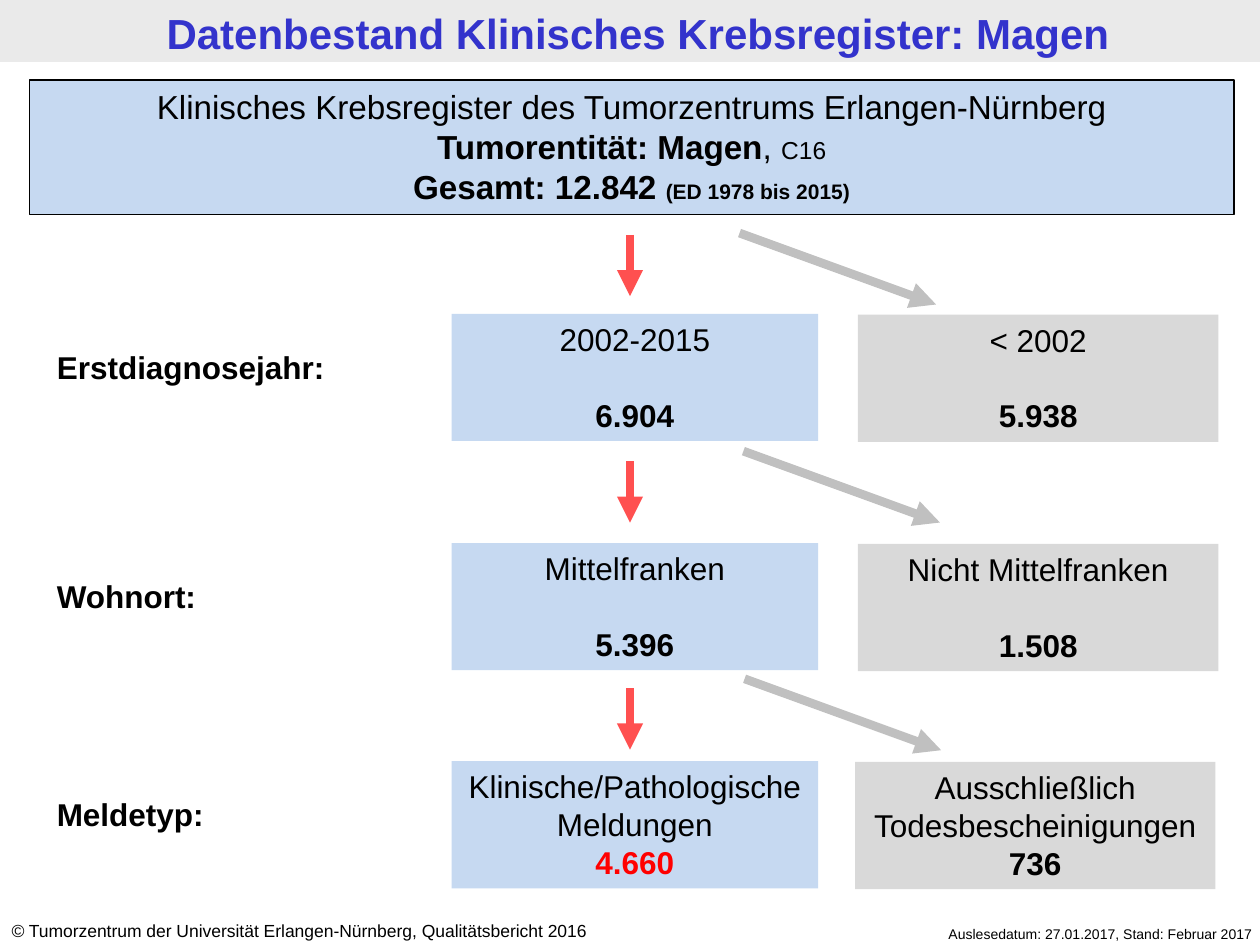
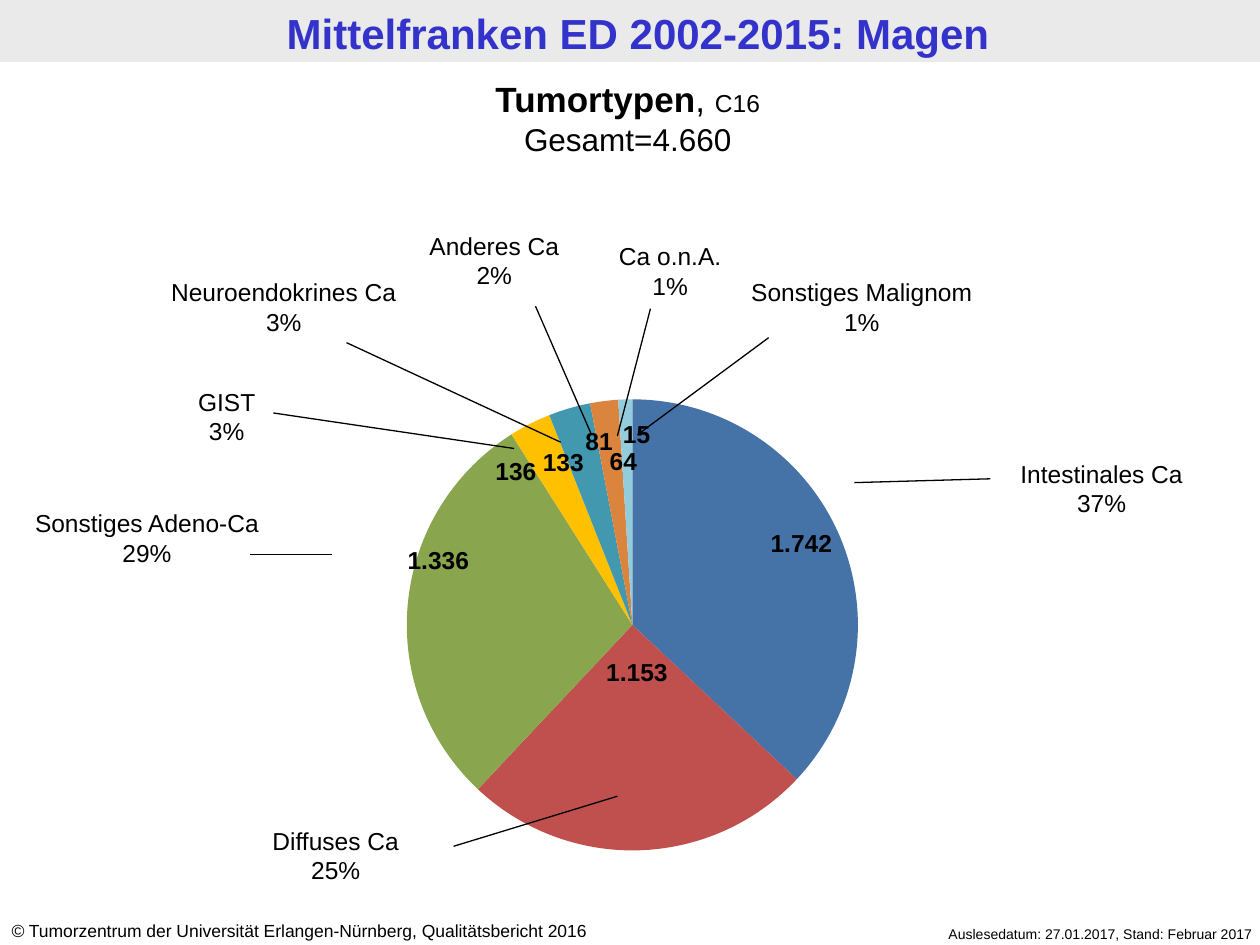
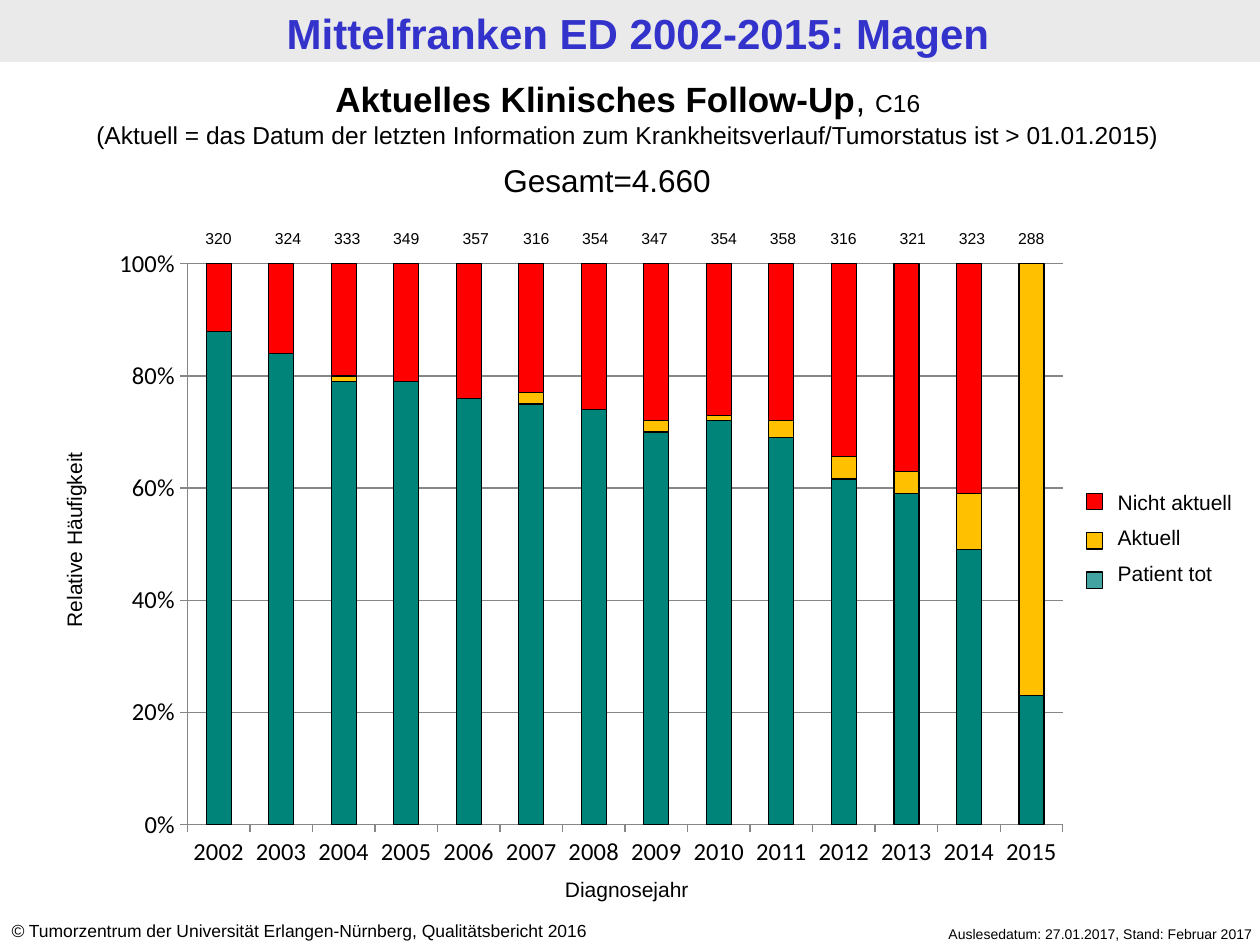
from lxml import etree
from pptx import Presentation
from pptx.chart.data import CategoryChartData
from pptx.dml.color import RGBColor
from pptx.enum import chart as ch, shapes, text
from pptx.oxml import parse_xml
from pptx.oxml.ns import nsdecls, qn
from pptx.util import Pt

BLACK = RGBColor(0x00, 0x00, 0x00)
WHITE = RGBColor(0xFF, 0xFF, 0xFF)
BAND = RGBColor(0xEA, 0xEA, 0xEA)
TITLE = RGBColor(0x33, 0x33, 0xCC)
KEPT = RGBColor(0xC6, 0xD9, 0xF1)
EXCLUDED = RGBColor(0xD9, 0xD9, 0xD9)
ARROW_KEPT = RGBColor(0xFF, 0x50, 0x50)
ARROW_EXCLUDED = RGBColor(0xC0, 0xC0, 0xC0)
GRID = RGBColor(0x86, 0x86, 0x86)
RED = RGBColor(0xFF, 0x00, 0x00)
AMBER = RGBColor(0xFF, 0xC0, 0x00)
TEAL = RGBColor(0x00, 0x83, 0x78)
TEAL_KEY = RGBColor(0x00, 0x83, 0x80)
SLICES = [RGBColor.from_string(c) for c in (
    "4572A7", "C0504D", "89A54E", "FFC000", "4198AF", "DB843D", "93CDDD",
    "FCD5B5", "BFBFBF")]

LEFT, CENTER, RIGHT = (text.PP_ALIGN.LEFT, text.PP_ALIGN.CENTER,
                       text.PP_ALIGN.RIGHT)


def run(words, size, bold=False, color=BLACK, italic=False):
    return words, size, bold, color, italic


class Deck:
    """Holds the presentation, its style and the slide being filled."""
    font = "Arial"
    chart_font = "Calibri"

    def __init__(self):
        self.prs = Presentation()
        self.prs.slide_width, self.prs.slide_height = Pt(720), Pt(540)
        self.s = None

    def slide(self, title):
        """Start a slide with title band and footers."""
        self.s = self.prs.slides.add_slide(self.prs.slide_layouts[6])
        self.s.background.fill.solid()
        self.s.background.fill.fore_color.rgb = WHITE
        self.rect(0, 0, 720, 35.4, BAND)
        self.text(4.6, 1.1, 720, 35.3, [[run(title, 24, True, TITLE)]],
                  inset=(6.5, 2.9))
        self.text(-0.5, 522.4, 377.3, 19.4, [[
            run("©", 10, italic=True),
            run(" Tumorzentrum der Universität Erlangen-Nürnberg, "
                "Qualitätsbericht 2016", 10)]], LEFT)
        self.text(478.8, 525.2, 244.1, 17.3, [[
            run("Auslesedatum: 27.01.2017, Stand: Februar 2017", 8)]], RIGHT)

    def fill_text(self, sp, paragraphs, align=CENTER, gap=0, wrap=True,
                  inset=(7.2, 3.6)):
        """Write paragraphs (lists of runs), gap points apart."""
        tf = sp.text_frame
        tf.word_wrap = wrap
        tf.vertical_anchor = text.MSO_ANCHOR.TOP
        tf.margin_left = tf.margin_right = Pt(inset[0])
        tf.margin_top = tf.margin_bottom = Pt(inset[1])
        for i, runs in enumerate(paragraphs):
            p = tf.add_paragraph() if i else tf.paragraphs[0]
            p.alignment = align
            if i and gap:
                p.space_before = Pt(gap)
            for words, size, bold, color, italic in runs:
                r = p.add_run()
                r.text = words
                f = r.font
                f.name, f.size, f.bold, f.italic = (self.font, Pt(size), bold,
                                                    italic)
                f.color.rgb = color

    def text(self, x, y, w, h, paragraphs, align=CENTER, rotation=0, **style):
        sp = self.s.shapes.add_textbox(Pt(x), Pt(y), Pt(w), Pt(h))
        sp.rotation = rotation
        self.fill_text(sp, paragraphs, align, **style)

    def rect(self, x, y, w, h, fill, outlined=False, paragraphs=(), alpha=None,
             **style):
        sp = self.s.shapes.add_shape(shapes.MSO_SHAPE.RECTANGLE,
                                     Pt(x), Pt(y), Pt(w), Pt(h))
        sp.shadow.inherit = False
        sp.fill.solid()
        sp.fill.fore_color.rgb = fill
        if alpha:
            clr = sp.element.spPr.find(qn("a:solidFill"))[0]
            etree.SubElement(clr, qn("a:alpha")).set("val", str(alpha * 1000))
        if outlined:
            sp.line.color.rgb = BLACK
            sp.line.width = Pt(0.75)
        else:
            sp.line.fill.background()
        if paragraphs:
            self.fill_text(sp, paragraphs, **style)

    def line(self, x1, y1, x2, y2, color=BLACK, width=0.75, arrow=False):
        cx = self.s.shapes.add_connector(shapes.MSO_CONNECTOR.STRAIGHT,
                                         Pt(x1), Pt(y1), Pt(x2), Pt(y2))
        cx.line.color.rgb = color
        cx.line.width = Pt(width)
        spPr = cx.element.spPr
        if arrow:
            ln = spPr.find(qn("a:ln"))
            etree.SubElement(ln, qn("a:tailEnd")).set("type", "triangle")
        etree.SubElement(spPr, qn("a:effectLst"))

    def chart(self, kind, box, categories, series, plot_box):
        """Add a chart whose plot fills plot_box; both boxes are on-slide."""
        data = CategoryChartData()
        data.categories = categories
        for i, values in enumerate(series, 1):
            data.add_series(f"Series {i}", values)
        chart = self.s.shapes.add_chart(kind, *map(Pt, box), data).chart
        chart.has_legend = chart.has_title = False
        chart.font.name = self.chart_font
        chart.font.size = Pt(18)
        chart.font.color.rgb = BLACK
        area = chart.element.find(".//" + qn("c:plotArea"))
        for old in area.findall(qn("c:layout")):
            area.remove(old)
        (x, y, w, h), (px, py, pw, ph) = box, plot_box
        shares = (px - x) / w, (py - y) / h, pw / w, ph / h
        sizes = "".join(f'<c:{tag} val="{share:.4f}"/>'
                        for tag, share in zip("xywh", shares))
        area.insert(0, parse_xml(
            f'<c:layout {nsdecls("c")}><c:manualLayout>'
            '<c:layoutTarget val="inner"/><c:xMode val="edge"/>'
            f'<c:yMode val="edge"/>{sizes}</c:manualLayout></c:layout>'))
        return chart


def data_flow(deck):
    deck.slide("Datenbestand Klinisches Krebsregister: Magen")
    deck.rect(16.8, 45.7, 688.3, 77, KEPT, True, [
        [run("Klinisches Krebsregister des Tumorzentrums Erlangen-Nürnberg",
             19)],
        [run("Tumorentität: Magen", 19, True), run(", ", 19), run("C16", 14)],
        [run("Gesamt: 12.842 ", 19, True),
         run("(ED 1978 bis 2015)", 12, True)]], inset=(7.9, 3.6))
    # criterion, kept, excluded, row top, gap, excluded left,
    # kept arrow top, excluded arrow start
    steps = [
        ("Erstdiagnosejahr:", ("2002-2015", "6.904"), ("< 2002", "5.938"),
         179.3, 21.6, 490.3, 134.3, (422.6, 133.2)),
        ("Wohnort:", ("Mittelfranken", "5.396"),
         ("Nicht Mittelfranken", "1.508"),
         310.3, 21.6, 490.3, 263.7, (424.8, 257.8)),
        ("Meldetyp:", ("Klinische/Pathologische Meldungen", "4.660"),
         ("Ausschließlich Todesbescheinigungen", "736"),
         434.9, 0, 488.6, 393.3, (425.5, 387.9)),
    ]
    for (criterion, kept, excluded, top, gap, excluded_x, arrow_y,
         (x, y)) in steps:
        result = RED if kept[1] == "4.660" else BLACK
        deck.text(25.4, top + 16.1, 198.7, 28.8, [[run(criterion, 18, True)]],
                  LEFT)
        for left, dy, w, fill, (name, count), color in (
                (258, 0, 209.5, KEPT, kept, result),
                (excluded_x, 0.5, 205.9, EXCLUDED, excluded, BLACK)):
            deck.rect(left, top + dy, w, 72.7, fill, paragraphs=[
                [run(name, 18)], [run(count, 18, True, color)]], gap=gap)
        deck.line(360, arrow_y, 360, arrow_y + 35, ARROW_KEPT, 5, True)
        deck.line(x, y, x + 112.3, y + 40.8, ARROW_EXCLUDED, 5, True)


def tumour_types(deck):
    deck.slide("Mittelfranken ED 2002-2015: Magen")
    deck.text(-2.7, 41, 722.9, 53.3, [
        [run("Tumortypen", 20, True), run(", ", 20), run("C16", 14)],
        [run("Gesamt=4.660", 18)]])
    # name, share, label box (x, y, w), count, count box (x, y, w),
    # leader line
    types = [
        ("Intestinales Ca", 37, (552.8, 258.5, 153.4), "1.742",
         (428, 298.1, 59.8), (488.2, 275.8, 565.9, 273.6)),
        ("Diffuses Ca", 25, (113, 468.5, 157.7), "1.153",
         (334.1, 372.2, 59.8), (352.8, 455, 259.2, 483.6)),
        ("Sonstiges Adeno-Ca", 29, (2.7, 287, 162.7), "1.336",
         (220.6, 307.9, 59.8), (189.7, 316.8, 142.6, 316.8)),
        ("GIST", 3, (54, 217.4, 151.2), "136",
         (275, 257, 39.6), (293.8, 256.3, 156.2, 236)),
        ("Neuroendokrines Ca", 3, (53.8, 155, 216.7), "133",
         (302.1, 252, 39.6), (320.4, 252.7, 198, 195.8)),
        ("Anderes Ca", 2, (206.9, 128.2, 151.2), "81",
         (324.7, 239.8, 35.3), (337.7, 247.7, 306, 175)),
        ("Ca o.n.A.", 1, (303.4, 134.4, 159.1), "64",
         (341.1, 251.3, 30.2), (352.8, 249.1, 371.7, 176.4)),
        ("Sonstiges Malignom", 1, (416.9, 155, 151.2), "15",
         (348.7, 236, 30.2), (364.3, 248.4, 439.2, 193)),
    ]
    slice_values = [37, 25, 29, 3, 3, 2, 1, 0, 0]
    chart = deck.chart(ch.XL_CHART_TYPE.PIE, (172.8, 218.2, 377.3, 277.9),
                       [str(i) for i in range(1, 10)], [slice_values],
                       (232.5, 228.2, 257.8, 257.8))
    plot = chart.plots[0]
    plot.vary_by_categories = True
    for i, color in enumerate(SLICES):
        point = plot.series[0].points[i].format
        point.fill.solid()
        point.fill.fore_color.rgb = color
        point.line.fill.background()
    for name, share, (x, y, w), count, count_box, leader in types:
        deck.text(x, y, w, 41, [[run(name, 14)], [run(f"{share}%", 14)]])
        deck.line(*leader)
        x, y, w = count_box
        deck.text(x, y, w, 24.5, [[run(count, 14, True)]], wrap=False)


def follow_up(deck):
    deck.slide("Mittelfranken ED 2002-2015: Magen")
    dead = [87, 84, 79, 79, 76, 75, 74, 70, 72, 69, 61, 59, 49, 23]
    current = [0, 0, 1, 0, 0, 2, 0, 2, 1, 3, 4, 4, 10, 77]
    outdated = [12, 16, 20, 21, 24, 23, 26, 28, 27, 28, 34, 37, 41, None]
    chart = deck.chart(ch.XL_CHART_TYPE.COLUMN_STACKED_100,
                       (56.9, 134.6, 561.6, 367.9),
                       [str(year) for year in range(2002, 2016)],
                       [dead, current, outdated], (107.1, 150.8, 500.2, 320.5))
    plot = chart.plots[0]
    plot.vary_by_categories = False
    plot.gap_width, plot.overlap = 150, 100
    for series, color in zip(plot.series, (TEAL, AMBER, RED)):
        series.format.fill.solid()
        series.format.fill.fore_color.rgb = color
        series.format.line.color.rgb = BLACK
        series.format.line.width = Pt(0.75)
    for axis in (chart.category_axis, chart.value_axis):
        axis.major_tick_mark = ch.XL_TICK_MARK.OUTSIDE
        axis.minor_tick_mark = ch.XL_TICK_MARK.NONE
        axis.tick_labels.font.size = Pt(14)
        axis.format.line.color.rgb = GRID
    axis = chart.value_axis
    axis.minimum_scale, axis.maximum_scale, axis.major_unit = 0, 1, 0.2
    axis.tick_labels.number_format = "0%"
    axis.tick_labels.number_format_is_linked = False
    axis.major_gridlines.format.line.color.rgb = GRID

    deck.text(-44.2, 297.4, 173.5, 22.3, [[run("Relative Häufigkeit", 12)]],
              rotation=270, inset=(7.9, 3.6))
    deck.text(277.2, 497.2, 162, 22.3, [[run("Diagnosejahr", 12)]],
              inset=(7.9, 3.6))
    deck.text(631.6, 276, 102.2, 65.5, [
        [run(name, 12)] for name in ("Nicht aktuell", "Aktuell",
                                     "Patient tot")], LEFT, gap=6)
    for y, color, alpha in ((282, RED, None), (304.4, AMBER, None),
                            (326.8, TEAL_KEY, 74)):
        deck.rect(620.8, y, 9.4, 9.4, color, True, alpha=alpha)
    deck.text(-2.7, 41, 722.9, 48.2, [
        [run("Aktuelles Klinisches Follow-Up", 20, True), run(", ", 20),
         run("C16", 14)],
        [run("(Aktuell = das Datum der letzten Information zum "
             "Krankheitsverlauf/Tumorstatus ist > 01.01.2015)", 14)]])
    deck.text(280.6, 88.6, 158.4, 28.8, [[run("Gesamt=4.660", 18)]], LEFT)
    year_totals = [
        (105.1, 320), (144.7, 324), (178.6, 333), (212.4, 349), (252, 357),
        (286.6, 316), (320.4, 354), (354.2, 347), (393.8, 354), (427.7, 358),
        (462.2, 316), (501.8, 321), (535.7, 323), (569.5, 288)]
    for x, total in year_totals:
        deck.text(x, 127.2, 39.6, 18, [[run(str(total), 9)]])


def main():
    deck = Deck()
    data_flow(deck)
    tumour_types(deck)
    follow_up(deck)
    deck.prs.save("out.pptx")


if __name__ == "__main__":
    main()
